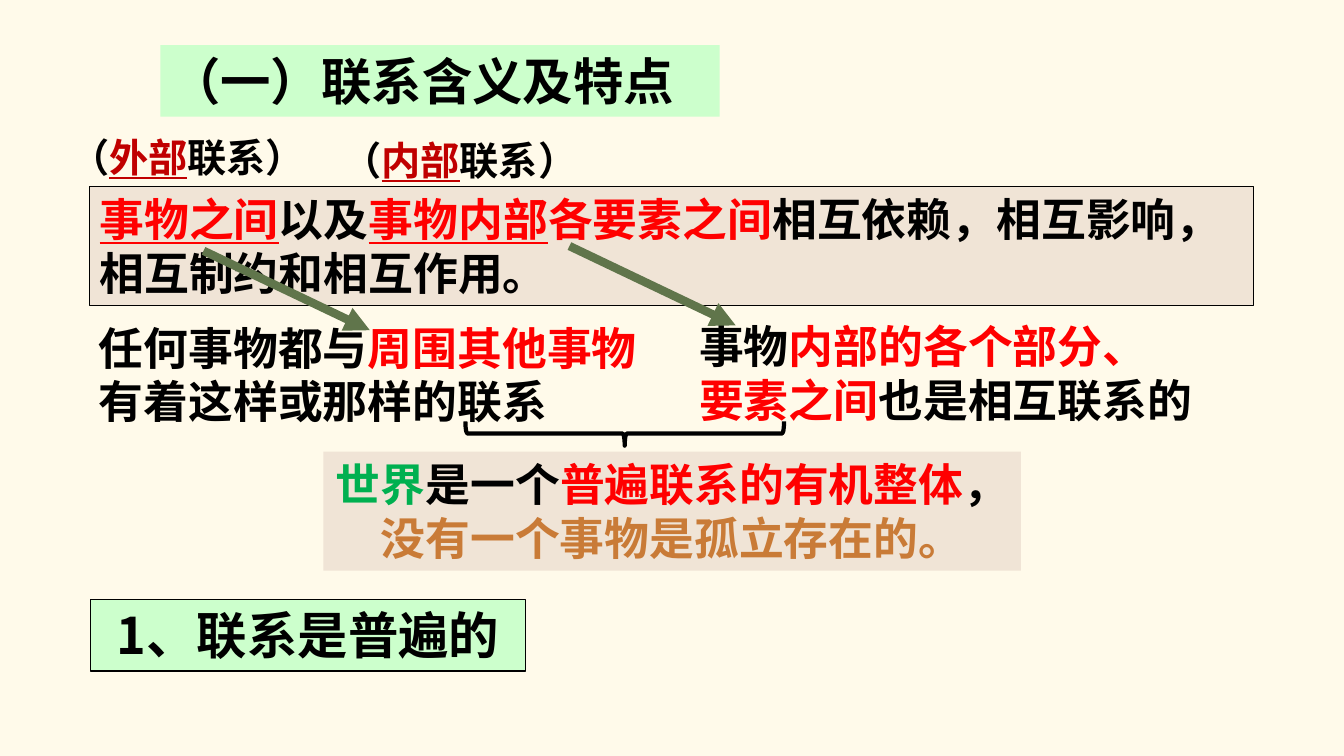
from lxml.etree import SubElement
from pptx import Presentation
from pptx.dml.color import RGBColor
from pptx.enum.shapes import MSO_CONNECTOR, MSO_SHAPE
from pptx.enum.text import MSO_ANCHOR, PP_ALIGN
from pptx.oxml.ns import qn
from pptx.util import Cm, Pt

FONT = "Noto Sans CJK SC"
BLACK, RED, DARK_RED = "000000", "FF0000", "C00000"
GREEN, BROWN, OLIVE = "00B050", "C97B37", "60754B"
CREAM, BEIGE, MINT = "FFFAEA", "F0E4D6", "CCFFCC"


def rgb(value):
    return RGBColor.from_string(value)


def add_run(p, text, size, color=BLACK, underline=False):
    r = p.add_run()
    r.text = text
    r.font.size = Pt(size)
    r.font.name = FONT
    r.font.bold = True
    r.font.underline = underline
    r.font.color.rgb = rgb(color)
    SubElement(r.font._element, qn("a:ea"), typeface=FONT)


def write(sp, size, lines, align=PP_ALIGN.LEFT):
    """Fill one paragraph; each line is a list of (text, color, underline) runs."""
    tf = sp.text_frame
    tf.word_wrap = True
    tf.vertical_anchor = MSO_ANCHOR.TOP
    p = tf.paragraphs[0]
    p.alignment = align
    for i, line in enumerate(lines):
        if i:
            p.add_line_break()
        for run in line:
            add_run(p, run[0], size, *run[1:])


def add_label(s, box, size, lines):
    write(s.shapes.add_textbox(*map(Cm, box)), size, lines)


def add_panel(s, box, fill, size, line, align=PP_ALIGN.LEFT, border=False):
    sp = s.shapes.add_shape(MSO_SHAPE.RECTANGLE, *map(Cm, box))
    sp.shadow.inherit = False
    sp.fill.solid()
    sp.fill.fore_color.rgb = rgb(fill)
    if border:
        sp.line.color.rgb = rgb(BLACK)
        sp.line.width = Pt(0.75)
    else:
        sp.line.fill.background()
    write(sp, size, [line], align)


def add_brace(s, box):
    sp = s.shapes.add_shape(MSO_SHAPE.LEFT_BRACE, *map(Cm, box))
    sp.rotation = 270
    sp.shadow.inherit = False
    sp.fill.background()
    sp.line.color.rgb = rgb(BLACK)
    sp.line.width = Pt(3)


def add_arrow(s, x, y):
    """Draw an arrow from (x, y) down to the explanation below."""
    c = s.shapes.add_connector(
        MSO_CONNECTOR.STRAIGHT, Cm(x), Cm(y), Cm(x + 4.19), Cm(y + 2))
    c.line.color.rgb = rgb(OLIVE)
    c.line.width = Pt(6)
    SubElement(c.line._get_or_add_ln(), qn("a:tailEnd"), type="triangle")
    SubElement(c._element.spPr, qn("a:effectLst"))


def main():
    prs = Presentation()
    prs.slide_width, prs.slide_height = Cm(33.87), Cm(19.05)
    s = prs.slides.add_slide(prs.slide_layouts[6])
    s.background.fill.solid()
    s.background.fill.fore_color.rgb = rgb(CREAM)

    add_panel(s, (2.26, 4.7, 29.34, 3), BEIGE, 32, [
        ("事物之间", RED, True), ("以及",), ("事物内部", RED, True),
        ("各要素之间", RED), ("相互依赖，相互影响，相互制约和相互作用。",)],
        border=True)
    add_panel(s, (4.04, 1.14, 14.1, 1.8), MINT, 36, [("（一）联系含义及特点",)])

    for x, y, width, side in ((1.52, 3.23, 10.54, "外部"), (8.38, 3.3, 10.21, "内部")):
        add_label(s, (x, y, width, 1.45), 28,
                  [[("（",), (side, DARK_RED, True), ("联系）",)]])

    add_label(s, (2.24, 7.95, 14.1, 3), 32, [
        [("任何事物都与",), ("周围其他事物", RED), ("有着这样或那样的联系",)]])
    add_label(s, (17.37, 7.9, 13.44, 3), 32, [
        [("事物",), ("内部的各个部分、", RED)],
        [("要素之间", RED), ("也是相互联系的",)]])

    add_panel(s, (8.15, 11.38, 17.58, 3), BEIGE, 32, [
        ("世界", GREEN), ("是一个",), ("普遍联系的有机整体", RED), ("，",),
        ("没有一个事物是孤立存在的。", BROWN)], PP_ALIGN.CENTER)
    add_brace(s, (15.44, 6.91, 0.61, 8.03))
    add_panel(s, (2.29, 15.11, 10.95, 1.8), MINT, 36, [("1、联系是普遍的",)],
              PP_ALIGN.CENTER, border=True)

    add_arrow(s, 5.13, 6.32)
    add_arrow(s, 14.35, 6.2)
    prs.save("out.pptx")


if __name__ == "__main__":
    main()
